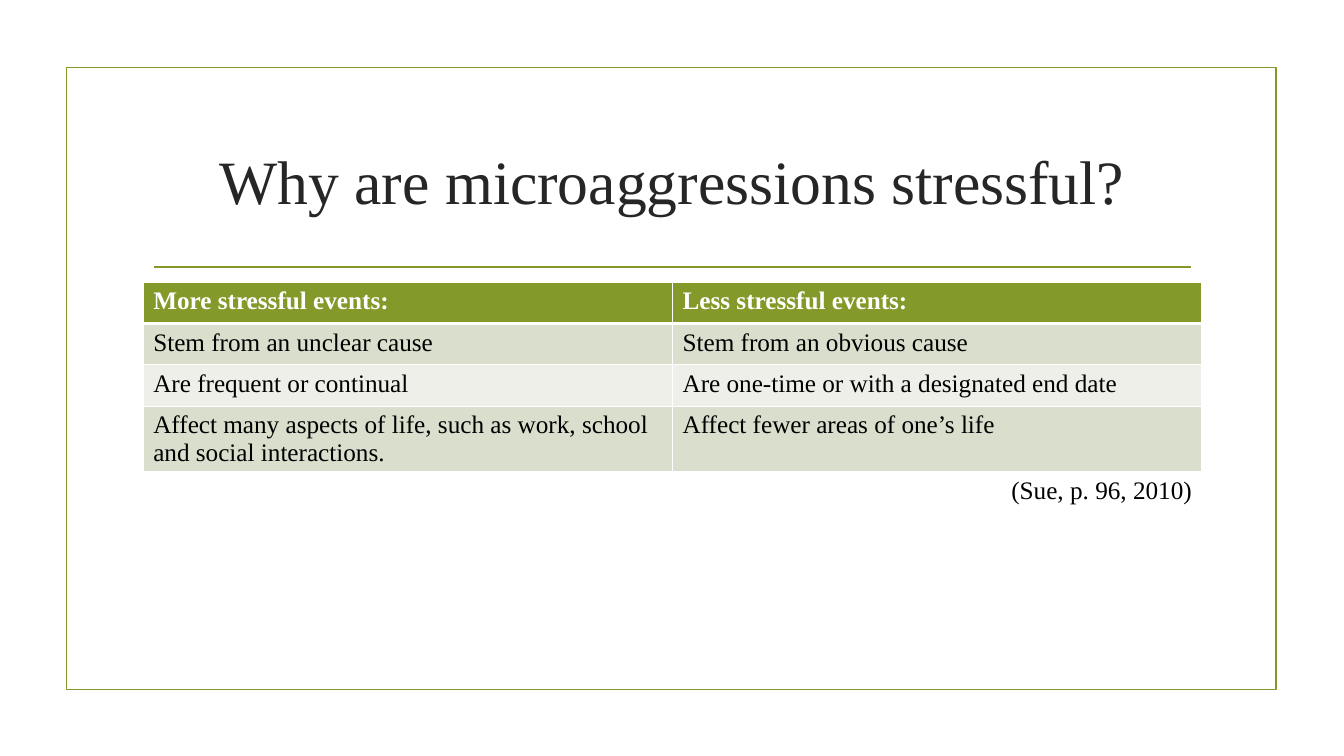
from lxml import etree
from pptx import Presentation
from pptx.dml.color import RGBColor
from pptx.enum.shapes import MSO_CONNECTOR, MSO_SHAPE
from pptx.enum.text import MSO_ANCHOR, PP_ALIGN
from pptx.oxml.ns import qn
from pptx.util import Inches, Pt

# Content
TITLE = "Why are microaggressions stressful?"
ROWS = [
    ("More stressful events:", "Less stressful events:"),
    ("Stem from an unclear cause", "Stem from an obvious cause"),
    ("Are frequent or continual", "Are one-time or with a designated end date"),
    ("Affect many aspects of life, such as work, school and social interactions.",
     "Affect fewer areas of one’s life"),
]
SOURCE = "(Sue, p. 96, 2010)"

# Style
FONT = "Times New Roman"
GREEN = RGBColor(0x83, 0x99, 0x2A)
DARK = RGBColor(0x26, 0x26, 0x26)
BLACK = RGBColor(0, 0, 0)
WHITE = RGBColor(0xFF, 0xFF, 0xFF)
BANDS = [RGBColor(0xED, 0xEF, 0xE8), RGBColor(0xD9, 0xDE, 0xCD)]
RECT, LINE = MSO_SHAPE.RECTANGLE, MSO_CONNECTOR.STRAIGHT
MIDDLE = MSO_ANCHOR.MIDDLE
CENTER, RIGHT = PP_ALIGN.CENTER, PP_ALIGN.RIGHT

# Layout in inches
WIDE, HIGH = 13.33, 7.5
LEFT, SPAN = 1.42, 10.5
TOP = 2.8
HEIGHTS = [0.41, 0.41, 0.41, 0.64]
RULE_Y, INSET = 2.65, 0.11
NOTE_W, NOTE_H = 4.83, 0.4


def style(para, size, color, bold=False, align=None):
    para.alignment = align
    font = para.font
    font.name, font.size, font.bold = FONT, Pt(size), bold
    font.color.rgb = color


def border(cell, side, width):
    props = cell._tc.get_or_add_tcPr()
    line = etree.SubElement(props, qn("a:ln" + side), w=str(Pt(width)))
    fill = etree.SubElement(line, qn("a:solidFill"))
    etree.SubElement(fill, qn("a:srgbClr"), val=str(WHITE))


deck = Presentation()
deck.slide_width, deck.slide_height = Inches(WIDE), Inches(HIGH)
slide = deck.slides.add_slide(deck.slide_layouts[5])
shapes = slide.shapes

# Title
title = shapes.title
title.left, title.top = Inches(LEFT), Inches(1.07)
title.width, title.height = Inches(SPAN), Inches(1.43)
title.text_frame.text = TITLE
title.text_frame.vertical_anchor = MIDDLE
style(title.text_frame.paragraphs[0], 44, DARK, align=CENTER)

# Frame and rule
frame = shapes.add_shape(RECT, Inches(0.66), Inches(0.67), Inches(12), Inches(6.17))
frame.shadow.inherit = False
frame.fill.background()
rule = shapes.add_connector(LINE, Inches(LEFT + INSET), Inches(RULE_Y),
                            Inches(LEFT + SPAN - INSET), Inches(RULE_Y))
etree.SubElement(rule._element.spPr, qn("a:effectLst"))
for part in (frame, rule):
    part.line.color.rgb = GREEN
    part.line.width = Pt(1.25)

# Table
table = shapes.add_table(len(ROWS), len(ROWS[0]), Inches(LEFT), Inches(TOP),
                         Inches(SPAN), Inches(sum(HEIGHTS))).table
for r, texts in enumerate(ROWS):
    table.rows[r].height = Inches(HEIGHTS[r])
    head = r == 0
    for c, text in enumerate(texts):
        cell = table.cell(r, c)
        cell.text = text
        style(cell.text_frame.paragraphs[0], 18, WHITE if head else BLACK, head)
        for side in "LRTB":
            thick = (r, side) in ((0, "B"), (1, "T"))
            border(cell, side, 3 if thick else 1)
        cell.fill.solid()
        cell.fill.fore_color.rgb = GREEN if head else BANDS[r % 2]

# Source note
note = shapes.add_textbox(Inches(LEFT + SPAN - NOTE_W), Inches(4.66),
                          Inches(NOTE_W), Inches(NOTE_H)).text_frame
note.word_wrap = True
note.text = SOURCE
style(note.paragraphs[0], 18, BLACK, align=RIGHT)

deck.save("out.pptx")
